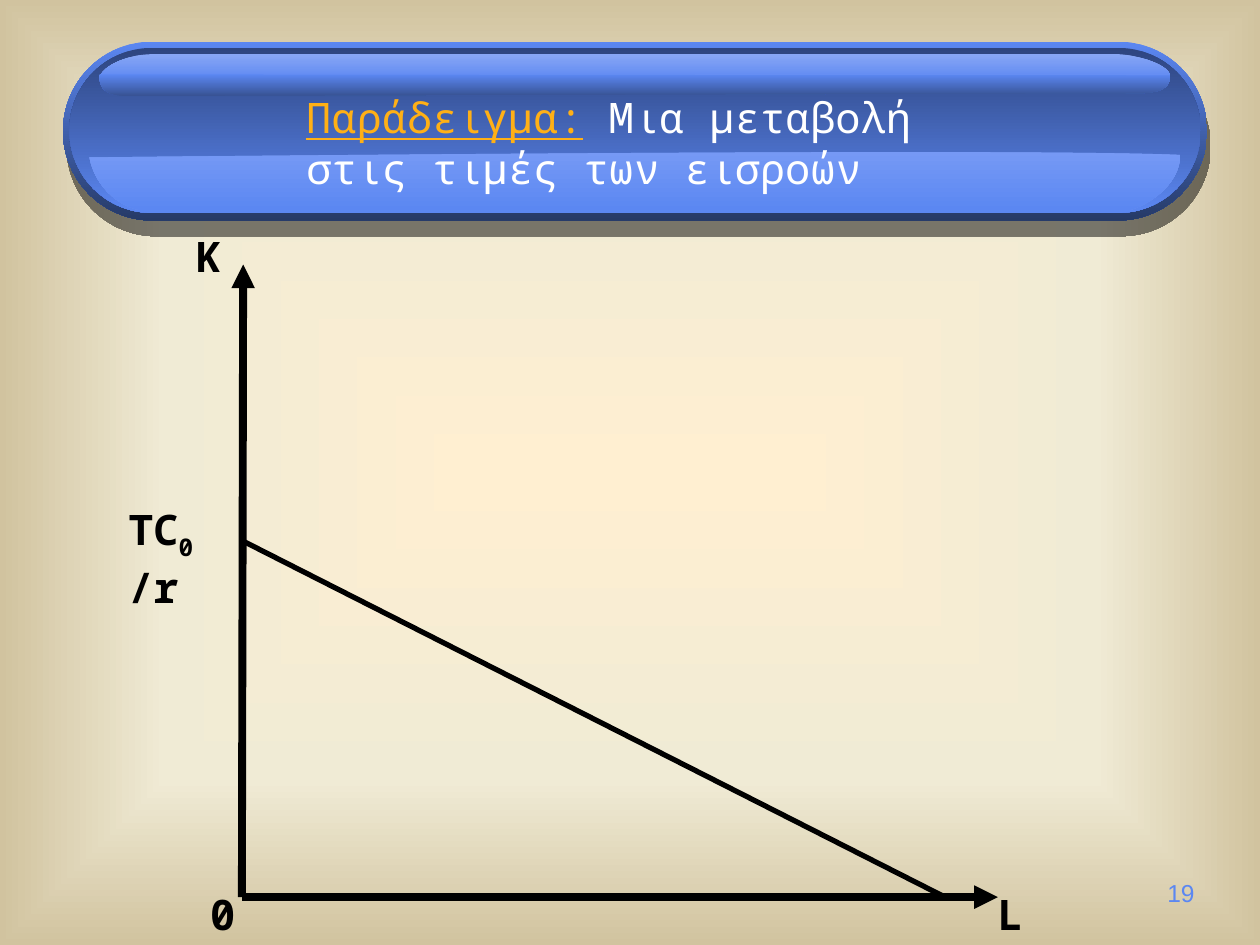
from dataclasses import dataclass
from typing import Optional

from lxml.etree import SubElement
from pptx import Presentation
from pptx.dml.color import RGBColor
from pptx.enum.shapes import MSO_CONNECTOR, MSO_SHAPE
from pptx.enum.text import MSO_ANCHOR, MSO_AUTO_SIZE, PP_ALIGN
from pptx.oxml import parse_xml
from pptx.oxml.ns import nsdecls, qn
from pptx.util import Inches, Pt

MONO = "Noto Sans Mono"
BLUE = "5B87F2"
BLACK = "000000"
WHITE = "FFFFFF"
AMBER = "FFB016"


@dataclass
class Span:
    text: str
    color: str = BLACK
    size: float = 24
    font: str = MONO
    bold: bool = False
    underline: bool = False
    baseline: int = 0


@dataclass
class Label:
    left: float
    top: float
    width: float
    spans: list[Span]
    wrap: bool = False
    align: Optional[PP_ALIGN] = None


@dataclass
class Stroke:
    start: tuple[float, float]
    end: tuple[float, float]
    width: float
    arrow: bool = False


@dataclass
class Capsule:
    left: float
    top: float
    width: float
    height: float
    colors: tuple[str, str]


@dataclass
class Gloss:
    """Closed outline: a two-number step is a line, a six-number step a Bézier curve."""
    start: tuple[float, float]
    steps: list[tuple[float, ...]]
    colors: tuple[str, str]


CAPSULES = [
    Capsule(0.5, 0.33, 9.08, 1.42, (BLUE, "263A67")),
    Capsule(0.55, 0.38, 8.98, 1.31, ("2E457F", BLUE)),
]
GLOSSES = [
    Gloss((0.79, 0.61), [(0.84, 0.5, 1.05, 0.43, 1.21, 0.43), (8.88, 0.43),
                         (9.03, 0.44, 9.28, 0.51, 9.29, 0.61),
                         (7.94, 0.64, 0.79, 0.61, 0.79, 0.61)], ("88A6F5", BLUE)),
    Gloss((0.79, 0.59), [(0.78, 0.72, 0.86, 0.76, 1.02, 0.76), (9.06, 0.74),
                         (9.21, 0.73, 9.28, 0.71, 9.29, 0.6)], (BLUE, "385394")),
    Gloss((0.71, 1.25), [(0.76, 1.5, 0.97, 1.66, 1.14, 1.67), (8.95, 1.67),
                         (9.1, 1.64, 9.36, 1.48, 9.37, 1.23),
                         (8, 1.17, 0.71, 1.25, 0.71, 1.25)], ("789BF5", BLUE)),
]
ORIGIN = (1.92, 7.12)
STROKES = [
    Stroke(ORIGIN, (7.92, 7.12), 4.5, arrow=True),
    Stroke(ORIGIN, (1.93, 2.1), 4.5, arrow=True),
    Stroke((1.92, 4.29), (7.5, 7.12), 3),
]
LABELS = [
    Label(7.08, 6.92, 2.5, [Span("19", BLUE, 14, "Arial")], True, PP_ALIGN.RIGHT),
    Label(7.82, 7, 0.33, [Span("L", bold=True)]),
    Label(1.46, 1.78, 0.37, [Span("K", bold=True)]),
    Label(1.57, 7, 0.37, [Span("0", bold=True)]),
    Label(0.92, 3.95, 0.83, [Span("TC", bold=True), Span("0", bold=True, baseline=-25000),
                             Span("/r", bold=True)], True),
]
TITLE = [Span("Παράδειγμα:", AMBER, underline=True), Span(" ", AMBER),
         Span("Μια μεταβολή στις τιμές των εισροών", WHITE)]


def rgb(color: str) -> RGBColor:
    return RGBColor.from_string(color)


def paint_background(page) -> None:
    page.background.fill.gradient()
    stops = "".join(f'<a:gs pos="{position}"><a:srgbClr val="{color}"/></a:gs>'
                    for position, color in ((0, "FFEFD1"), (65000, "F0EBD5"), (100000, "D1C39F")))
    gradient = page.background._cSld.find(".//" + qn("a:gradFill"))
    gradient.getparent().replace(gradient, parse_xml(
        f'<a:gradFill {nsdecls("a")} rotWithShape="1"><a:gsLst>{stops}</a:gsLst>'
        '<a:path path="shape"><a:fillToRect l="50000" t="50000" r="50000" b="50000"/></a:path>'
        "</a:gradFill>"))


def paint_downward(shape, colors: tuple[str, str]) -> None:
    """Fill from the first colour at the top to the second at the bottom."""
    shape.shadow.inherit = False
    shape.line.fill.background()
    shape.fill.gradient()
    shape.fill.gradient_angle = 270
    for stop, color in zip(shape.fill.gradient_stops, colors):
        stop.color.rgb = rgb(color)


def draw_capsule(page, capsule: Capsule):
    shape = page.shapes.add_shape(
        MSO_SHAPE.ROUNDED_RECTANGLE, Inches(capsule.left), Inches(capsule.top),
        Inches(capsule.width), Inches(capsule.height))
    shape.adjustments[0] = 0.5
    paint_downward(shape, capsule.colors)
    return shape


def cast_shadow(shape) -> None:
    effects = shape._element.spPr.find(qn("a:effectLst"))
    shadow = SubElement(effects, qn("a:outerShdw"), dist=str(Pt(9.2)),
                        dir=str(77 * 60000), algn="ctr", rotWithShape="0")
    color = SubElement(shadow, qn("a:srgbClr"), val=BLACK)
    SubElement(color, qn("a:alpha"), val="50000")


def draw_gloss(page, gloss: Gloss) -> None:
    """Draw the control polygon, then turn each curve's three segments into one Bézier."""
    builder = page.shapes.build_freeform(*map(Inches, gloss.start))
    for step in gloss.steps:
        lengths = [Inches(value) for value in step]
        builder.add_line_segments(list(zip(lengths[::2], lengths[1::2])), close=False)
    shape = builder.convert_to_shape()
    outline = shape._element.find(".//" + qn("a:path"))
    segments = iter(outline.findall(qn("a:lnTo")))
    for step in gloss.steps:
        first = next(segments)
        if len(step) == 6:
            curve = parse_xml(f'<a:cubicBezTo {nsdecls("a")}/>')
            outline.replace(first, curve)
            curve.append(first[0])
            for _ in range(2):
                segment = next(segments)
                curve.append(segment[0])
                outline.remove(segment)
    SubElement(outline, qn("a:close"))
    paint_downward(shape, gloss.colors)


def draw_stroke(page, stroke: Stroke) -> None:
    ends = [Inches(value) for value in stroke.start + stroke.end]
    connector = page.shapes.add_connector(MSO_CONNECTOR.STRAIGHT, *ends)
    connector.line.color.rgb = rgb(BLACK)
    connector.line.width = Pt(stroke.width)
    if stroke.arrow:
        SubElement(connector.line._get_or_add_ln(), qn("a:tailEnd"), type="triangle")
    SubElement(connector._element.spPr, qn("a:effectLst"))


def write_spans(para, spans: list[Span]) -> None:
    for span in spans:
        run = para.add_run()
        run.text = span.text
        font = run.font
        font.name, font.size, font.bold = span.font, Pt(span.size), span.bold
        font.underline = span.underline
        font.color.rgb = rgb(span.color)
        if span.baseline:
            font._element.set("baseline", str(span.baseline))


def draw_label(page, label: Label) -> None:
    box = page.shapes.add_textbox(Inches(label.left), Inches(label.top),
                                  Inches(label.width), Inches(0.5))
    frame = box.text_frame
    frame.word_wrap = label.wrap
    para = frame.paragraphs[0]
    para.alignment = label.align
    write_spans(para, label.spans)


def place_title(page) -> None:
    title = page.shapes.title
    title.left, title.top = Inches(2.33), Inches(0.68)
    title.width, title.height = Inches(5.92), Inches(0.9)
    frame = title.text_frame
    frame.word_wrap = True
    frame.auto_size = MSO_AUTO_SIZE.NONE
    frame.vertical_anchor = MSO_ANCHOR.TOP
    frame.paragraphs[0].alignment = PP_ALIGN.LEFT
    write_spans(frame.paragraphs[0], TITLE)
    page.shapes._spTree.append(title._element)  # in front of the capsule


def main() -> None:
    deck = Presentation()
    deck.slide_width, deck.slide_height = Inches(10), Inches(7.5)
    page = deck.slides.add_slide(deck.slide_layouts[5])
    paint_background(page)
    rim, _ = [draw_capsule(page, capsule) for capsule in CAPSULES]
    cast_shadow(rim)
    for gloss in GLOSSES:
        draw_gloss(page, gloss)
    for stroke in STROKES:
        draw_stroke(page, stroke)
    for label in LABELS:
        draw_label(page, label)
    place_title(page)
    deck.save("out.pptx")


if __name__ == "__main__":
    main()
